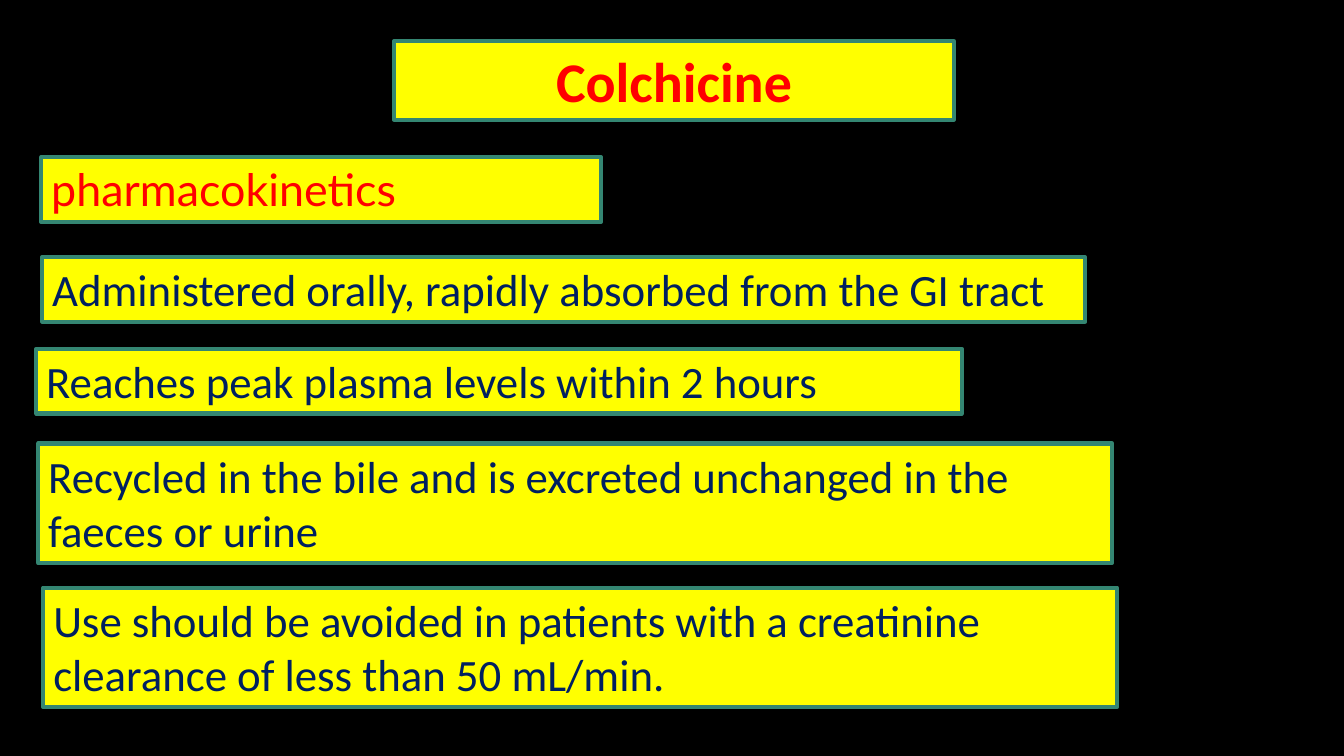
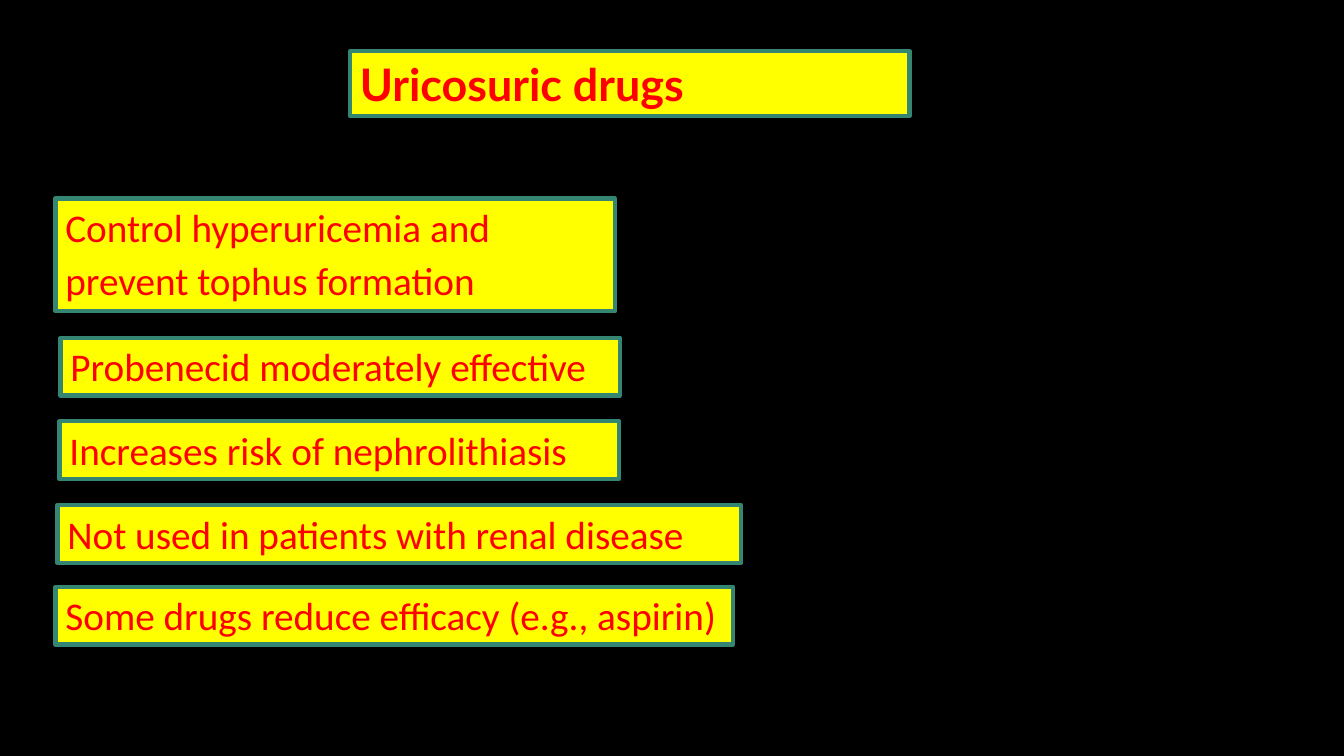
import dataclasses
import lxml.etree
import pptx
import pptx.dml.color
import pptx.enum.shapes
import pptx.enum.text
import pptx.oxml.ns
import pptx.util

Inches = pptx.util.Inches
ALIGN = pptx.enum.text.PP_ALIGN


@dataclasses.dataclass(frozen=True)
class Theme:
    back: str = "000000"
    fill: str = "FFFF00"
    edge: str = "348672"
    red: str = "FF0000"
    navy: str = "002060"
    body: str = "Calibri"
    head: str = "Lato"
    large: int = 40
    mid: int = 32
    small: int = 28
    rule: int = 3


@dataclasses.dataclass(frozen=True)
class Style:
    size: int
    color: str
    font: str
    bold: bool = False
    align: ALIGN = ALIGN.LEFT


THEME = Theme()
NARROW = 5.55


def rgb(code):
    return pptx.dml.color.RGBColor.from_string(code)


def tall(*sizes):
    """Height in inches of a panel with one line of text per size."""
    return 0.1 + sum(sizes) * 1.22 / 72


def panel(slide, left, top, width, text, style, lines=1, tail=None):
    """Yellow framed text; tail is the size of a space closing the last line."""
    sizes = [style.size] * (lines - 1) + [tail or style.size]
    box = slide.shapes.add_shape(
        pptx.enum.shapes.MSO_SHAPE.RECTANGLE,
        Inches(left), Inches(top), Inches(width), Inches(tall(*sizes)))
    box.shadow.inherit = False
    box.fill.solid()
    box.fill.fore_color.rgb = rgb(THEME.fill)
    box.line.color.rgb = rgb(THEME.edge)
    box.line.width = pptx.util.Pt(THEME.rule)
    # Rounded corners on the frame
    qn = pptx.oxml.ns.qn
    lxml.etree.SubElement(box.element.spPr.find(qn("a:ln")), qn("a:round"))

    frame = box.text_frame
    frame.word_wrap = True
    frame.auto_size = pptx.enum.text.MSO_AUTO_SIZE.SHAPE_TO_FIT_TEXT
    frame.vertical_anchor = pptx.enum.text.MSO_ANCHOR.TOP
    para = frame.paragraphs[0]
    para.alignment = style.align
    para.font.name = style.font
    para.font.size = pptx.util.Pt(style.size)
    para.font.bold = style.bold
    para.font.color.rgb = rgb(style.color)
    para.add_run().text = text
    if tail:
        run = para.add_run()
        run.text = " "
        run.font.size = pptx.util.Pt(tail)


def drug(deck, title, area, rows):
    """Slide with a title panel and rows set from the corner of the area."""
    slide = deck.slides.add_slide(deck.slide_layouts[6])
    slide.background.fill.solid()
    slide.background.fill.fore_color.rgb = rgb(THEME.back)
    panel(slide, *title)
    left, top = area
    for right, down, *rest in rows:
        panel(slide, left + right, top + down, *rest)


def main():
    deck = pptx.Presentation()
    deck.slide_width, deck.slide_height = Inches(13.33), Inches(7.5)

    # Colchicine
    name = Style(THEME.large, THEME.red, THEME.body, True, ALIGN.CENTER)
    topic = Style(THEME.mid, THEME.red, THEME.head)
    fact = Style(THEME.mid, THEME.navy, THEME.body)
    drug(deck, (3.91, 0.41, NARROW, "Colchicine", name), (0.36, 1.56), [
        (0.05, 0, NARROW, "pharmacokinetics", topic),
        (0.06, 0.99, 10.34,
         "Administered orally, rapidly absorbed from the GI tract", fact),
        (0, 1.9, 9.18, "Reaches peak plasma levels within 2 hours", fact),
        (0.02, 2.84, 10.65, "Recycled in the bile and is excreted "
         "unchanged in the faeces or urine", fact, 2),
        (0.07, 4.27, 10.65, "Use should be avoided in patients with a "
         "creatinine clearance of less than 50 mL/min.", fact, 2),
    ])

    # Uricosuric drugs
    group = Style(THEME.mid, THEME.red, THEME.head, True)
    note = Style(THEME.small, THEME.red, THEME.body)
    drug(deck, (3.47, 0.51, NARROW, "Uricosuric drugs", group), (0.55, 1.97), [
        (0, 0, NARROW, "Control hyperuricemia and prevent tophus formation",
         note, 2, THEME.mid),
        (0.05, 1.38, NARROW, "Probenecid moderately effective", note),
        (0.04, 2.21, NARROW, "Increases risk of nephrolithiasis", note),
        (0.02, 3.04, 6.78, "Not used in patients with renal disease", note),
        (0, 3.85, 6.72, "Some drugs reduce efficacy (e.g., aspirin)", note),
    ])
    deck.save("out.pptx")


if __name__ == "__main__":
    main()
